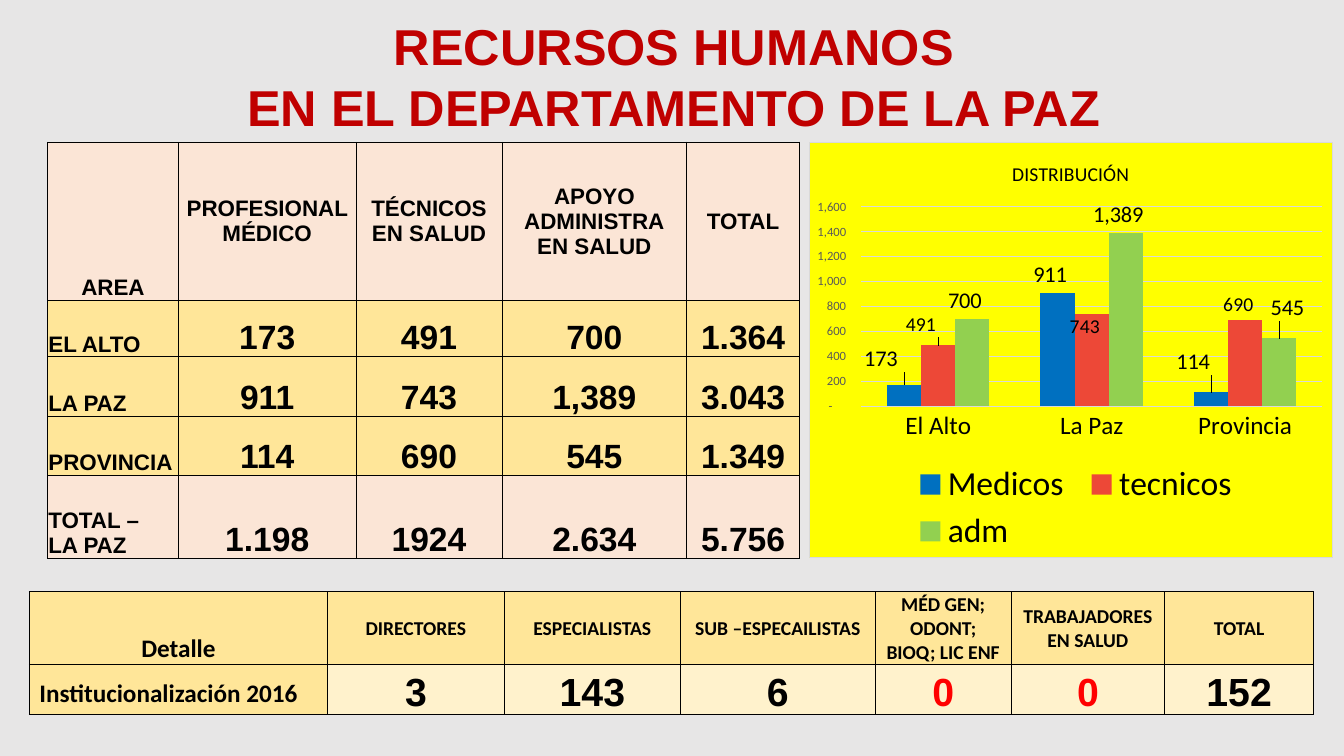
from lxml.etree import SubElement
from pptx import Presentation
from pptx.chart.data import CategoryChartData
from pptx.dml.color import RGBColor
from pptx.enum.chart import XL_CHART_TYPE as Kind, XL_LABEL_POSITION as Spot
from pptx.enum.chart import XL_LEGEND_POSITION as Side, XL_TICK_MARK as Tick
from pptx.enum.text import MSO_ANCHOR as Anchor, PP_ALIGN as Align
from pptx.oxml import parse_xml
from pptx.oxml.ns import nsdecls, qn
from pptx.util import Inches, Pt

# Content
TITLE = "RECURSOS HUMANOS\nEN EL DEPARTAMENTO DE LA PAZ"
STAFF = [
    ["AREA", "PROFESIONAL MÉDICO", "TÉCNICOS EN SALUD", "APOYO ADMINISTRA\nEN SALUD", "TOTAL"],
    ["EL ALTO", "173", "491", "700", "1.364"],
    ["LA PAZ", "911", "743", "1,389", "3.043"],
    ["PROVINCIA", "114", "690", "545", "1.349"],
    ["TOTAL –\nLA PAZ", "1.198", "1924", "2.634", "5.756"],
]
POSTS = [
    ["Detalle", "DIRECTORES", "ESPECIALISTAS", "SUB –ESPECAILISTAS",
     "MÉD GEN;\nODONT;\nBIOQ; LIC ENF", "TRABAJADORES EN SALUD", "TOTAL"],
    ["Institucionalización 2016", "3", "143", "6", "0", "0", "152"],
]
AREAS = ["El Alto", "La Paz", "Provincia"]
# name, values, colour, label size, label shifts by point
SERIES = [
    ("Medicos", (173, 911, 114), "0070C0", 16, {0: (-0.03, -0.02), 2: (-0.02, -0.03)}),
    ("tecnicos", (491, 743, 690), "ED4837", 14, {0: (-0.02, -0.01), 1: (0, 0.07)}),
    ("adm", (700, 1389, 545), "92D050", 16, {2: (0.03, -0.03)}),
]
THEME = {
    "back": "E7E6E6", "title": "C00000", "ink": "000000", "zero": "FF0000",
    "pink": "FBE5D6", "gold": "FFE699", "cream": "FFF2CC", "chart": "FFFF00",
    "grid": "D9D9D9", "scale": "595959", "head": "Arial", "body": "Calibri",
    "big": 36, "count": 28, "sum": 24, "note": 18, "cell": 16, "small": 14, "tick": 9,
}
NUM = r'_-* #,##0\ _€_-;\-* #,##0\ _€_-;_-* "-"??\ _€_-;_-@_-'


def tone(key):
    return RGBColor.from_string(THEME.get(key, key))


def style(font, size, face, ink="ink", bold=False):
    font.size, font.name, font.bold = Pt(THEME.get(size, size)), THEME[face], bold
    font.color.rgb = tone(ink)


def paint(fill, key):
    fill.solid()
    fill.fore_color.rgb = tone(key)


def edge(cell, widths):
    props = cell._tc.get_or_add_tcPr()
    for i, (side, width) in enumerate(zip("LRTB", widths)):
        props.insert(i, parse_xml(
            f'<a:ln{side} {nsdecls("a")} w="{Pt(width)}"><a:solidFill>'
            f'<a:srgbClr val="{THEME["ink"]}"/></a:solidFill></a:ln{side}>'))


def add_grid(slide, rows, box, wide, high, thick, look):
    """Table whose borders are heavier from column `thick` on."""
    table = slide.shapes.add_table(len(rows), len(wide), *map(Inches, box)).table
    for col, width in zip(table.columns, wide):
        col.width = Inches(width)
    for row, height in zip(table.rows, high):
        row.height = Inches(height)
    for r, row in enumerate(rows):
        for c, text in enumerate(row):
            cell = table.cell(r, c)
            fill, size, face = look(r, c)
            paint(cell.fill, fill)
            cell.margin_left = cell.margin_right = cell.margin_top = Inches(0.01)
            cell.margin_bottom = 0
            cell.vertical_anchor = Anchor.MIDDLE if r == 0 and c else Anchor.BOTTOM
            cell.text_frame.text = text
            for para in cell.text_frame.paragraphs:
                para.alignment = Align.CENTER if r == 0 or c else Align.LEFT
                style(para.runs[0].font, size, face, "zero" if text == "0" else "ink", True)
            heavy = 1 if c >= thick else 0.5
            edge(cell, (heavy, 1 if c >= thick - 1 else 0.5, heavy, heavy))
    return table


def staff_look(r, c):
    fill = "pink" if r in (0, len(STAFF) - 1) else "gold"
    return fill, "sum" if r and c else "cell", "head"


def post_look(r, c):
    if r and c:
        return "cream", "count", "head"
    return "gold", "small" if c else "note", "body"


def place(node, **parts):
    """Fill a c:layout element with manual settings."""
    spot = SubElement(node, qn("c:manualLayout"))
    for name, value in parts.items():
        SubElement(spot, qn("c:" + name)).set("val", str(value))


def new_layout(parent, index):
    for old in parent.findall(qn("c:layout")):
        parent.remove(old)
    node = parse_xml(f'<c:layout {nsdecls("c")}/>')
    parent.insert(index, node)
    return node


deck = Presentation()
deck.slide_width, deck.slide_height = Inches(13.33), Inches(7.5)
slide = deck.slides.add_slide(deck.slide_layouts[5])
paint(slide.background.fill, "back")

# Title
title = slide.shapes.title
title.left, title.top, title.width, title.height = map(Inches, (2.24, 0.1, 8.89, 1.31))
title.text_frame.text = TITLE
for para in title.text_frame.paragraphs:
    para.alignment = Align.CENTER
    style(para.runs[0].font, "big", "head", "title", True)

# Tables
add_grid(slide, STAFF, (0.47, 1.41, 7.47, 4.13), (1.3, 1.76, 1.45, 1.83, 1.12),
         (1.57, 0.56, 0.59, 0.59, 0.82), 3, staff_look)
posts = add_grid(slide, POSTS, (0.29, 5.87, 12.73, 1.21),
                 (2.96, 1.75, 1.75, 1.93, 1.35, 1.52, 1.48), (0.69, 0.5), 4, post_look)
name = posts.cell(1, 0)
name.margin_left = name.margin_right = Inches(0.1)
name.margin_top = name.margin_bottom = Inches(0.05)

# Chart
data = CategoryChartData(number_format=NUM)
data.categories = AREAS
for label, values, *_ in SERIES:
    data.add_series(label, values)
chart = slide.shapes.add_chart(
    Kind.COLUMN_CLUSTERED, *map(Inches, (8.02, 1.41, 5.2, 4.13)), data).chart
style(chart.font, 10, "body")
chart.has_title = True
chart.chart_title.text_frame.text = "DISTRIBUCIÓN"
style(chart.chart_title.text_frame.paragraphs[0].runs[0].font, "small", "body")
chart.chart_title.include_in_layout = False
chart.has_legend = True
chart.legend.position, chart.legend.include_in_layout = Side.BOTTOM, False
style(chart.legend.font, "sum", "body")

# Axes
cats, vals = chart.category_axis, chart.value_axis
for axis, size, ink in ((cats, "note", "ink"), (vals, "tick", "scale")):
    axis.major_tick_mark = axis.minor_tick_mark = Tick.NONE
    axis.format.line.fill.background()
    style(axis.tick_labels.font, size, "body", ink)
vals.minimum_scale, vals.maximum_scale, vals.major_unit = 0, 1600, 200
vals.tick_labels.number_format = NUM
vals.tick_labels.number_format_is_linked = False
vals.major_gridlines.format.line.color.rgb = tone("grid")
vals.major_gridlines.format.line.width = Pt(0.75)

# Bars and their labels
plot = chart.plots[0]
plot.gap_width, plot.overlap, plot.vary_by_categories = 150, 0, False
for bars, (_, _, color, size, shifts) in zip(plot.series, SERIES):
    paint(bars.format.fill, color)
    labels = bars.data_labels
    labels.show_value, labels.position = True, Spot.OUTSIDE_END
    labels.number_format, labels.number_format_is_linked = NUM, False
    style(labels.font, size, "body")
    for point, (x, y) in shifts.items():
        label = bars.points[point].data_label
        style(label.font, size, "body")
        label.position = Spot.OUTSIDE_END
        node = bars._element.xpath(f"c:dLbls/c:dLbl[c:idx/@val='{point}']")[0]
        place(new_layout(node, 1), x=x, y=y)

# Chart layout and background
place(new_layout(chart._chartSpace.chart.plotArea, 0), layoutTarget="inner",
      xMode="edge", yMode="edge", x=0.1, y=0.155, w=0.88, h=0.48)
place(new_layout(chart.legend._element, 1),
      xMode="edge", yMode="edge", x=0.18, y=0.76, w=0.66, h=0.24)
chart._chartSpace.chart.addnext(parse_xml(
    f'<c:spPr {nsdecls("c", "a")}><a:solidFill><a:srgbClr val="{THEME["chart"]}"/></a:solidFill>'
    f'<a:ln w="{Pt(0.75)}"><a:solidFill><a:srgbClr val="{THEME["grid"]}"/></a:solidFill></a:ln>'
    '</c:spPr>'))

deck.save("out.pptx")
